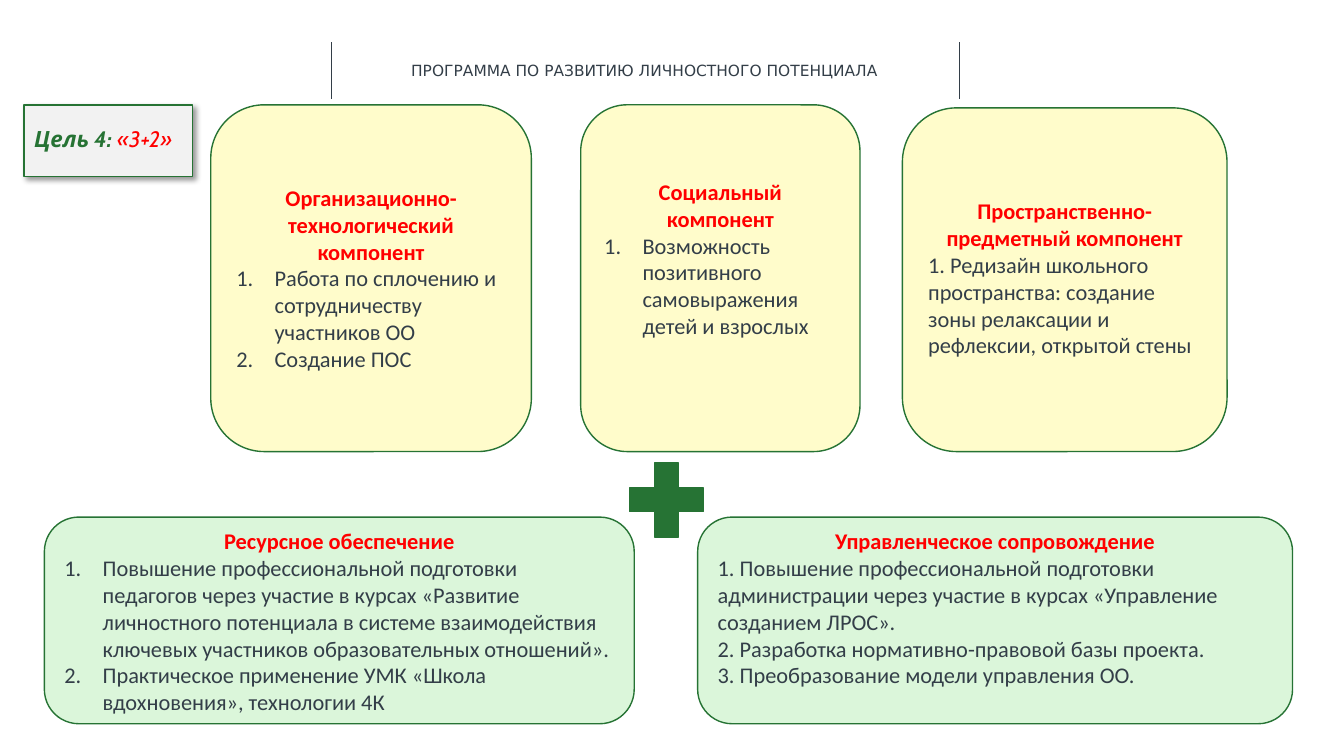
from lxml import etree
from pptx import Presentation
from pptx.dml.color import RGBColor
from pptx.enum.shapes import MSO_CONNECTOR, MSO_SHAPE
from pptx.enum.text import MSO_ANCHOR, MSO_AUTO_SIZE, PP_ALIGN
from pptx.oxml import parse_xml
from pptx.oxml.ns import nsdecls, qn
from pptx.util import Inches, Pt

WHITE = RGBColor(0xFF, 0xFF, 0xFF)
SLATE = RGBColor(0x33, 0x3E, 0x48)
GREEN = RGBColor(0x26, 0x73, 0x34)
RED = RGBColor(0xFF, 0x00, 0x00)
GREY = RGBColor(0xF2, 0xF2, 0xF2)
CREAM = RGBColor(0xFF, 0xFC, 0xCB)
MINT = RGBColor(0xDB, 0xF6, 0xDA)

# Place, fill, space above the heading, heading, automatic numbering, items
CARDS = [
    ((2.09, 1.04, 3.18, 3.44), CREAM, 0.63,
     "Организационно-технологический компонент", True,
     ["Работа по сплочению и сотрудничеству участников ОО",
      "Создание ПОС"]),
    ((5.76, 1.04, 2.77, 3.44), CREAM, 0.59,
     "Социальный компонент", True,
     ["Возможность позитивного самовыражения детей и взрослых"]),
    ((8.95, 1.07, 3.22, 3.41), CREAM, 0.73,
     "Пространственно-предметный компонент", False,
     ["1. Редизайн школьного пространства: создание зоны релаксации "
      "и рефлексии, открытой стены"]),
    ((6.92, 5.13, 5.9, 2.05), MINT, 0,
     "Управленческое сопровождение", False,
     ["1. Повышение профессиональной подготовки администрации через "
      "участие в курсах «Управление созданием ЛРОС».",
      "2. Разработка нормативно-правовой базы проекта.",
      "3. Преобразование модели управления ОО."]),
    ((0.44, 5.13, 5.85, 2.05), MINT, 0,
     "Ресурсное обеспечение", True,
     ["Повышение профессиональной подготовки педагогов через участие "
      "в курсах «Развитие личностного потенциала в системе "
      "взаимодействия ключевых участников образовательных отношений».",
      "Практическое применение УМК «Школа вдохновения», технологии 4К"]),
]


def set_font(font, name, size, color, bold=False):
    font.name = name
    font.size = Pt(size)
    font.color.rgb = color
    font.bold = bold


def add_box(slide, kind, place, fill):
    shape = slide.shapes.add_shape(kind, *map(Inches, place))
    shape.shadow.inherit = False
    shape.fill.solid()
    shape.fill.fore_color.rgb = fill
    shape.line.color.rgb = GREEN
    shape.line.width = Pt(1)
    return shape


def add_header_rule(slide, x):
    rule = slide.shapes.add_connector(
        MSO_CONNECTOR.STRAIGHT, Inches(x), Inches(0.42), Inches(x), Inches(0.98))
    rule.line.color.rgb = SLATE
    rule.line.width = Pt(0.5)
    etree.SubElement(rule._element.spPr, qn("a:effectLst"))


def add_title(slide):
    box = slide.shapes.add_textbox(
        Inches(3.98), Inches(0.56), Inches(4.87), Inches(0.28))
    frame = box.text_frame
    frame.word_wrap = True
    frame.auto_size = MSO_AUTO_SIZE.SHAPE_TO_FIT_TEXT
    paragraph = frame.paragraphs[0]
    paragraph.text = "ПРОГРАММА ПО РАЗВИТИЮ ЛИЧНОСТНОГО ПОТЕНЦИАЛА"
    set_font(paragraph.font, "DejaVu Sans", 11, SLATE)


def add_drop_shadow(shape):
    effects = shape._element.spPr.find(qn("a:effectLst"))
    effects.append(parse_xml(
        f'<a:outerShdw {nsdecls("a")} blurRad="{Pt(4)}" dist="{Pt(3)}" '
        'dir="2700000" algn="tl" rotWithShape="0">'
        '<a:srgbClr val="000000"><a:alpha val="40000"/></a:srgbClr>'
        '</a:outerShdw>'))


def add_goal(slide):
    shape = add_box(slide, MSO_SHAPE.RECTANGLE, (0.24, 1.04, 1.67, 0.71), GREY)
    add_drop_shadow(shape)
    shape.text_frame.vertical_anchor = MSO_ANCHOR.MIDDLE
    paragraph = shape.text_frame.paragraphs[0]
    paragraph.alignment = PP_ALIGN.JUSTIFY
    paragraph.line_spacing = 0.9
    for text, color, bold in (("Цель 4: ", GREEN, True), ("«3+2»", RED, False)):
        run = paragraph.add_run()
        run.text = text
        set_font(run.font, "Cabin", 16, color, bold)
        run.font.italic = True


def number_paragraph(paragraph):
    properties = paragraph._p.get_or_add_pPr()
    properties.set("marL", str(Inches(0.38)))
    properties.set("indent", str(-Inches(0.38)))
    etree.SubElement(properties, qn("a:buAutoNum"), type="arabicPeriod")


def add_card(slide, place, fill, space_above, heading, numbered, items):
    shape = add_box(slide, MSO_SHAPE.ROUNDED_RECTANGLE, place, fill)
    frame = shape.text_frame
    frame.word_wrap = True
    frame.vertical_anchor = MSO_ANCHOR.TOP
    frame.margin_top = Inches(space_above)
    frame.margin_bottom = 0
    title = frame.paragraphs[0]
    title.text = heading
    title.alignment = PP_ALIGN.CENTER
    set_font(title.font, "Calibri", 16, RED, True)
    for item in items:
        paragraph = frame.add_paragraph()
        paragraph.text = item
        paragraph.alignment = PP_ALIGN.LEFT
        if numbered:
            number_paragraph(paragraph)
        set_font(paragraph.font, "Calibri", 16, SLATE)


def main():
    presentation = Presentation()
    presentation.slide_width = Inches(13.33)
    presentation.slide_height = Inches(7.5)
    slide = presentation.slides.add_slide(presentation.slide_layouts[6])
    slide.background.fill.solid()
    slide.background.fill.fore_color.rgb = WHITE

    for x in (3.29, 9.52):
        add_header_rule(slide, x)
    add_title(slide)
    add_goal(slide)
    for card in CARDS:
        add_card(slide, *card)
    add_box(slide, MSO_SHAPE.MATH_PLUS, (6.11, 4.46, 1, 1), GREEN)

    presentation.save("out.pptx")


if __name__ == "__main__":
    main()
